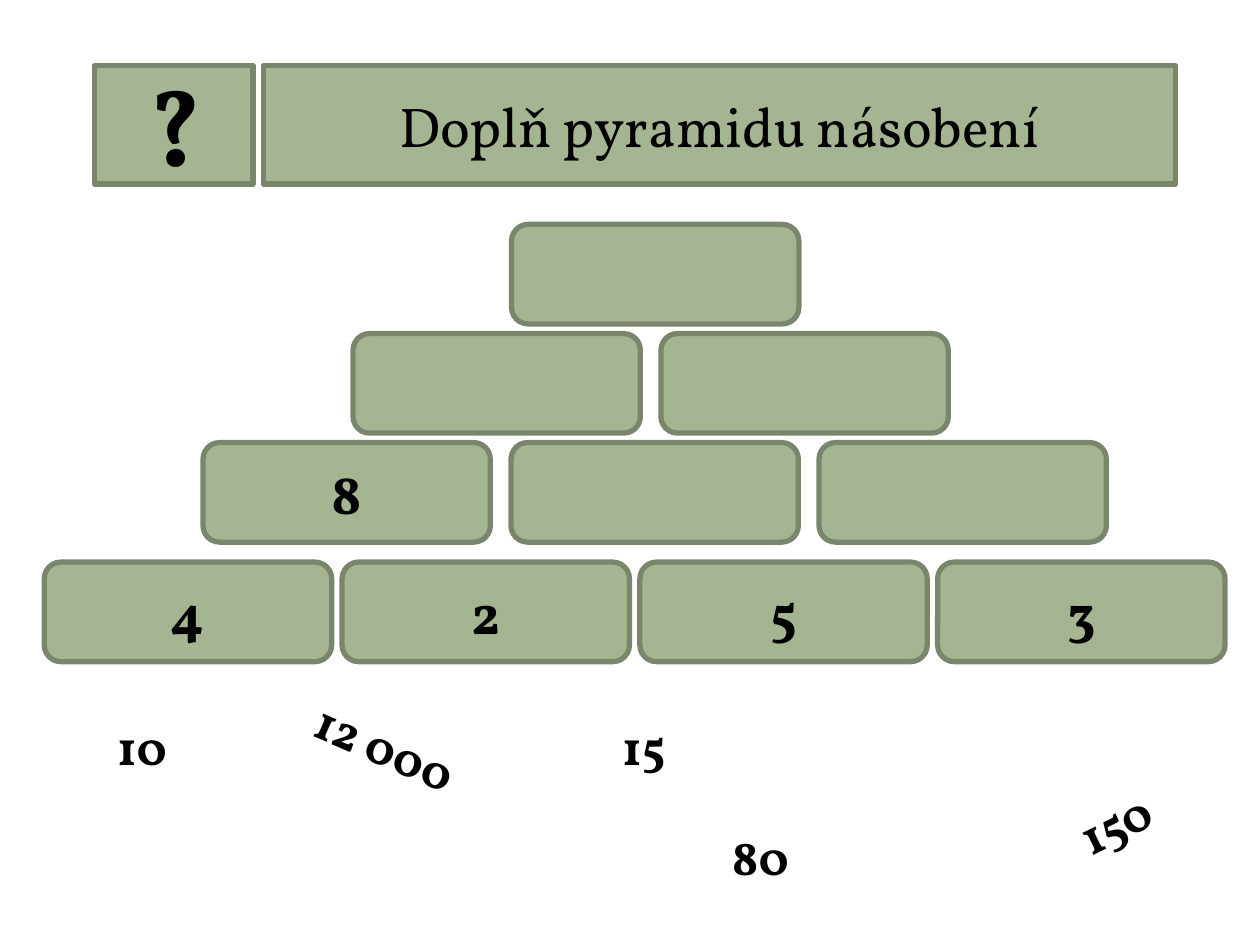
from pptx import Presentation
from pptx.dml.color import RGBColor
from pptx.enum import shapes, text
from pptx.util import Pt

HUES = {"fill": "A5B592", "line": "7A866C", "ink": "000000"}
FACE = "Vollkorn"
KINDS = shapes.MSO_SHAPE


def tint(name):
    return RGBColor.from_string(HUES[name])


def write(frame, words, size, bold, align):
    para = frame.paragraphs[0]
    para.alignment = align
    run = para.add_run()
    run.text = words
    look = {"name": FACE, "size": Pt(size), "bold": bold}
    for key, value in look.items():
        setattr(run.font, key, value)
    run.font.color.rgb = tint("ink")


def block(slide, kind, box, words="", size=32, bold=True):
    shape = slide.shapes.add_shape(kind, *map(Pt, box))
    shape.shadow.inherit = False
    shape.fill.solid()
    shape.fill.fore_color.rgb = tint("fill")
    shape.line.color.rgb = tint("line")
    shape.line.width = Pt(3)
    if words:
        shape.text_frame.vertical_anchor = text.MSO_ANCHOR.MIDDLE
        write(shape.text_frame, words, size, bold, text.PP_ALIGN.CENTER)


def header(slide, box):
    left, top, width, height = box
    mark, gap = 90.6, 5.9
    start = mark + gap
    block(slide, KINDS.RECTANGLE, (left + start, top, width - start, height),
          "Doplň pyramidu násobení", bold=False)
    block(slide, KINDS.RECTANGLE, (left, top, mark, height), "?", 60)


def pyramid(slide, box):
    left, top, width, height = box
    wide, high = 164.2, 56.9
    rows = [
        (267, 0, 0, [""]),
        (176.4, 62.4, 176, ["", ""]),
        (90.7, 124.7, 176, ["8", "", ""]),
        (0, height - high, (width - wide) / 3, ["4", "2", "5", "3"]),
    ]
    for x, y, step, row in rows:
        for col, words in enumerate(row):
            block(slide, KINDS.ROUNDED_RECTANGLE,
                  (left + x + col * step, top + y, wide, high), words)


def choices(slide, box):
    left, top, width, height = box
    high = 41.2
    items = [
        ("10", 0, 0, 62.6, 0),
        ("15", 288.7, 0, 79.2, 0),
        ("80", 351.4, height - high, 79.2, 0),
        ("150", width - 67.7, 41, 67.7, 333.8),
        ("12 000", 106.6, 25.2, 221, 23.6),
    ]
    for words, x, y, wide, turn in items:
        label = slide.shapes.add_textbox(
            Pt(left + x), Pt(top + y), Pt(wide), Pt(high))
        label.rotation = turn
        frame = label.text_frame
        frame.word_wrap = True
        frame.auto_size = text.MSO_AUTO_SIZE.SHAPE_TO_FIT_TEXT
        write(frame, words, 28, True, text.PP_ALIGN.LEFT)


def main():
    deck = Presentation()
    deck.slide_width = Pt(720)
    deck.slide_height = Pt(540)
    slide = deck.slides.add_slide(deck.slide_layouts[6])
    header(slide, (54, 37.5, 617.8, 67.7))
    pyramid(slide, (25.3, 128.2, 674.7, 249.9))
    choices(slide, (59.8, 406, 617, 104))
    deck.save("out.pptx")


if __name__ == "__main__":
    main()
